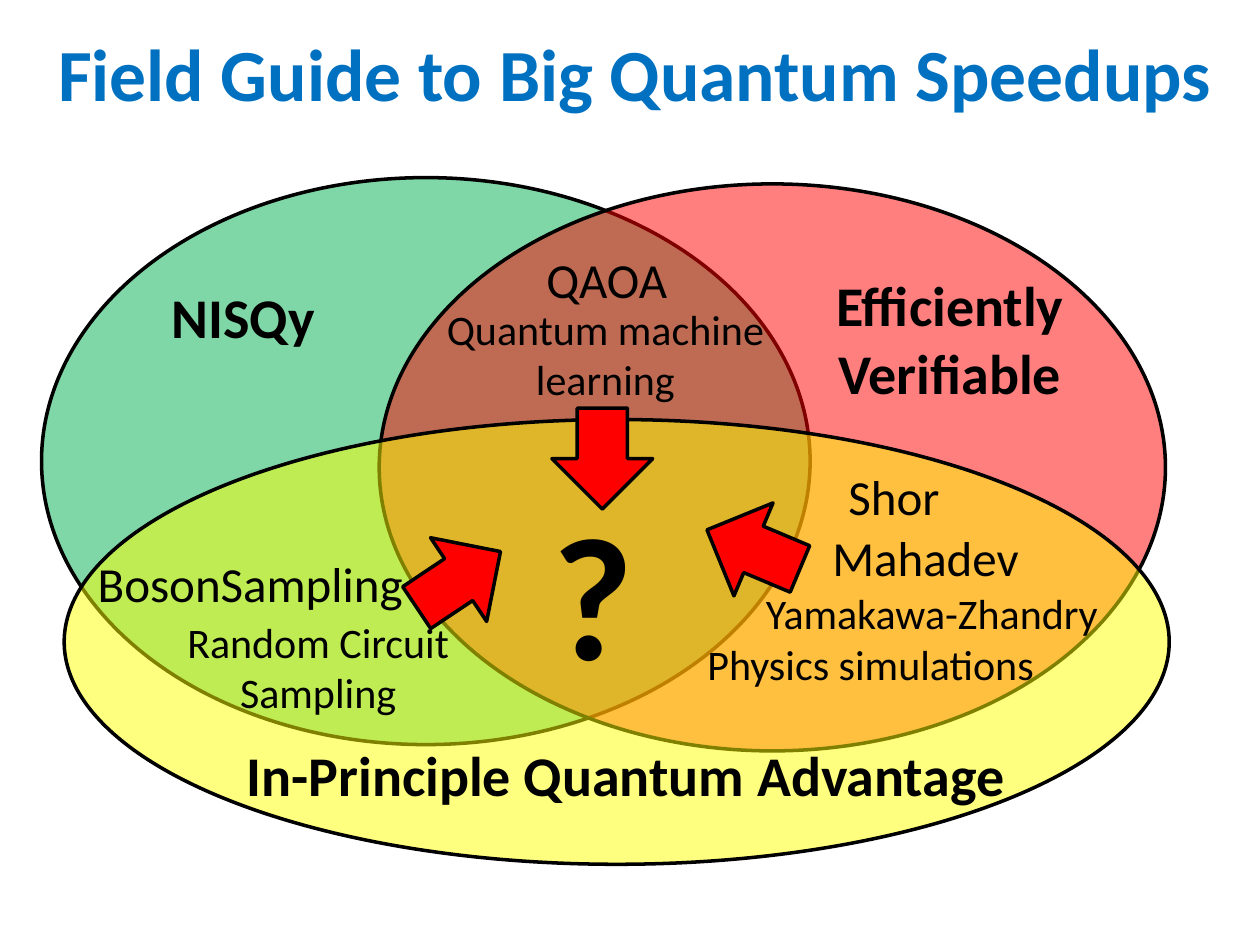
import pptx
import pptx.util
import pptx.dml.color
import pptx.enum.shapes
import pptx.enum.text
import pptx.oxml
import pptx.oxml.ns
from pptx.util import Inches

SHAPE = pptx.enum.shapes.MSO_SHAPE

# left, top, width, height, colour
SETS = [
    (0.33, 1.41, 6.1, 4.5, "00B050"),
    (3.01, 1.46, 6.24, 4.5, "FF0000"),
    (0.51, 3.33, 8.77, 3.53, "FFFF00"),
]

# text, left, top, width, height
SET_NAMES = [
    ("NISQy", 0.4, 2.19, 3.06, 0.64),
    ("Efficiently\nVerifiable", 6.44, 2.1, 2.2, 1.18),
    ("In-Principle Quantum Advantage", 1.85, 5.83, 6.24, 0.64),
]

# text, left, top, width, height, size
EXAMPLES = [
    ("Mahadev", 6.34, 4.14, 2.01, 0.57, 28),
    ("Shor", 6.09, 3.65, 2.01, 0.57, 28),
    ("Physics simulations", 5.38, 5.02, 3.06, 0.51, 24),
    ("QAOA", 3.81, 1.93, 2.01, 0.57, 28),
    ("Quantum machine learning", 3.11, 2.36, 3.39, 0.91, 24),
    ("BosonSampling", 0.59, 4.34, 2.79, 0.57, 28),
    ("Yamakawa-Zhandry", 5.7, 4.61, 3.39, 0.51, 24),
    ("Random Circuit Sampling", 1.13, 4.84, 2.79, 0.91, 24),
]

# left, top, rotation
ARROWS = [(3.24, 4.2, 326.2), (5.58, 3.96, 202.8), (4.38, 3.24, 90)]
ARROW_SIZE = 0.8


def rgb(color):
    return pptx.dml.color.RGBColor.from_string(color)


def add_outlined(s, kind, left, top, width, height, color):
    sp = s.shapes.add_shape(kind, Inches(left), Inches(top), Inches(width), Inches(height))
    sp.shadow.inherit = False
    sp.fill.solid()
    sp.fill.fore_color.rgb = rgb(color)
    sp.line.color.rgb = rgb("000000")
    sp.line.width = pptx.util.Pt(2)
    return sp


def set_opacity(sp, percent):
    clr = sp.fill._xPr.find(".//" + pptx.oxml.ns.qn("a:srgbClr"))
    alpha = pptx.oxml.parse_xml(
        f'<a:alpha {pptx.oxml.ns.nsdecls("a")} val="{percent * 1000}"/>')
    clr.append(alpha)


def add_label(s, text, left, top, width, height, size, bold=False, color="000000"):
    sp = s.shapes.add_textbox(Inches(left), Inches(top), Inches(width), Inches(height))
    tf = sp.text_frame
    tf.word_wrap = True
    tf.text = text
    for p in tf.paragraphs:
        p.alignment = pptx.enum.text.PP_ALIGN.CENTER
        p.font.name = "Calibri"
        p.font.size = pptx.util.Pt(size)
        p.font.bold = bold
        p.font.color.rgb = rgb(color)
    return tf


def main():
    prs = pptx.Presentation()
    prs.slide_width, prs.slide_height = Inches(10), Inches(7.5)
    s = prs.slides.add_slide(prs.slide_layouts[6])

    title = add_label(s, "Field Guide to Big Quantum Speedups",
                      0.25, 0.11, 9.58, 0.93, 42, True, "0070C0")
    title.vertical_anchor = pptx.enum.text.MSO_ANCHOR.MIDDLE

    for *box, color in SETS:
        set_opacity(add_outlined(s, SHAPE.OVAL, *box, color), 50)
    for name in SET_NAMES:
        add_label(s, *name, 32, True)
    for example in EXAMPLES:
        add_label(s, *example)
    add_label(s, "?", 2.92, 3.8, 3.58, 1.78, 100, True)
    for left, top, rotation in ARROWS:
        arrow = add_outlined(s, SHAPE.RIGHT_ARROW, left, top, ARROW_SIZE, ARROW_SIZE, "FF0000")
        arrow.rotation = rotation

    prs.save("out.pptx")


if __name__ == "__main__":
    main()
